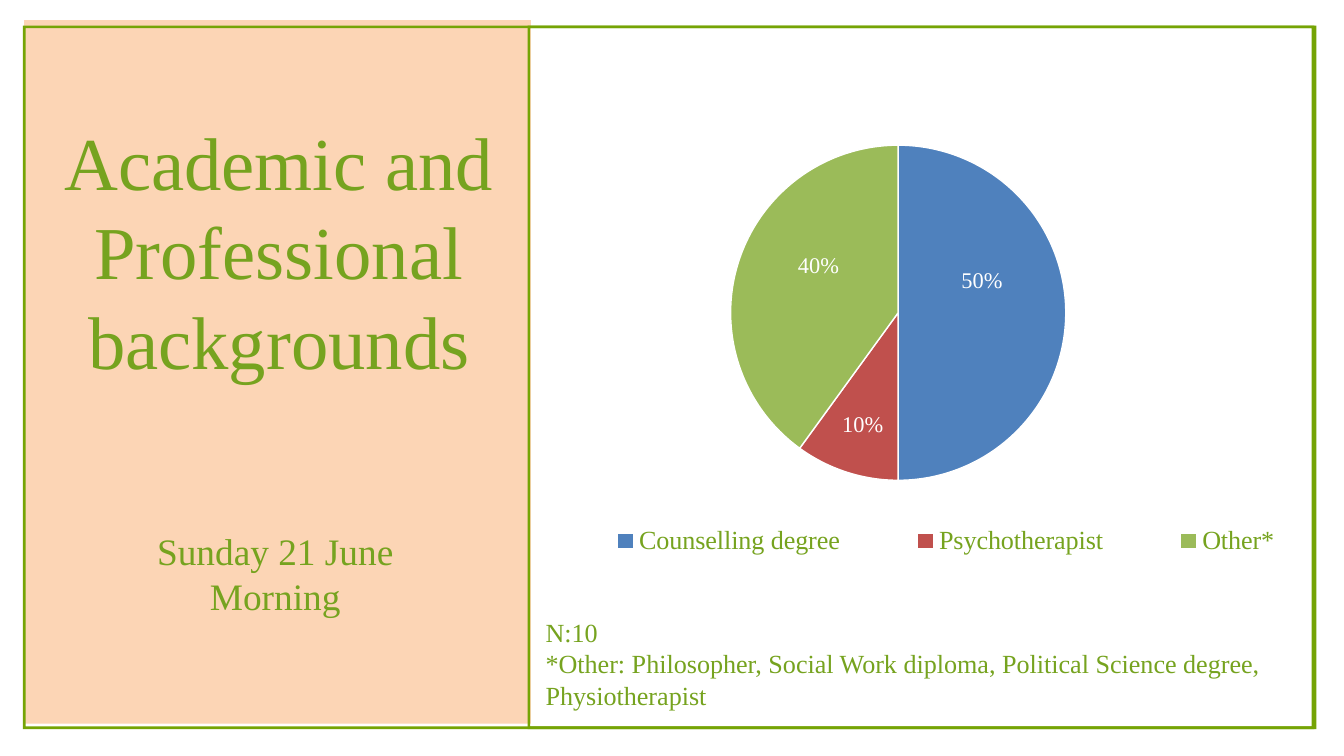
from copy import deepcopy

from pptx import Presentation
from pptx.chart.data import CategoryChartData
from pptx.dml.color import RGBColor
from pptx.enum.chart import XL_CHART_TYPE as ChartType
from pptx.enum.chart import XL_LABEL_POSITION as LabelPosition
from pptx.enum.chart import XL_LEGEND_POSITION as LegendPosition
from pptx.enum.shapes import MSO_SHAPE as Shape
from pptx.enum.text import MSO_ANCHOR as Anchor
from pptx.enum.text import MSO_AUTO_SIZE as AutoSize
from pptx.enum.text import PP_ALIGN as Align
from pptx.oxml import parse_xml
from pptx.oxml.ns import nsdecls
from pptx.util import Inches, Pt

PEACH = RGBColor(0xFC, 0xD5, 0xB5)
FRAME_GREEN = RGBColor(0x75, 0xA4, 0x05)
TEXT_GREEN = RGBColor(0x76, 0xA3, 0x1F)
WHITE = RGBColor(0xFF, 0xFF, 0xFF)
BLACK = RGBColor(0, 0, 0)
BLUE = RGBColor(0x4F, 0x81, 0xBD)
RED = RGBColor(0xC0, 0x50, 0x4D)
OLIVE = RGBColor(0x9B, 0xBB, 0x59)
SERIF = "Times New Roman"


def manual_layout(x, y, w=None, h=None, target=None, edge=False):
    parts = []
    if target:
        parts.append(("layoutTarget", target))
    if edge:
        parts += [("xMode", "edge"), ("yMode", "edge")]
    parts += [("x", x), ("y", y)]
    if w is not None:
        parts += [("w", w), ("h", h)]
    body = "".join(f'<c:{tag} val="{value}"/>' for tag, value in parts)
    return parse_xml(
        f'<c:layout {nsdecls("c")}><c:manualLayout>{body}</c:manualLayout></c:layout>'
    )


class SlideBuilder:
    def __init__(self, page):
        self.page = page

    def style(self, font, size, color, name=SERIF):
        font.name = name
        font.size = Pt(size)
        font.color.rgb = color

    def finish(self, shape, color):
        shape.shadow.inherit = False
        shape.fill.solid()
        shape.fill.fore_color.rgb = color
        shape.line.fill.background()

    def panel(self, left, top, width, height, color):
        box = self.page.shapes.add_shape(
            Shape.RECTANGLE, Inches(left), Inches(top), Inches(width), Inches(height)
        )
        self.finish(box, color)

    def frame(self, left, top, right, bottom, thickness, color):
        outline = None
        for inset in (0, thickness):
            x1, x2 = Inches(left + inset), Inches(right - inset)
            y1, y2 = Inches(top + inset), Inches(bottom - inset)
            if outline is None:
                outline = self.page.shapes.build_freeform(x2, y1)
            else:
                outline.move_to(x2, y1)
            outline.add_line_segments([(x1, y1), (x1, y2), (x2, y2)], close=True)
        self.finish(outline.convert_to_shape(), color)

    def fill_text(self, box, lines, size, align, inset=None):
        frame = box.text_frame
        frame.word_wrap = True
        frame.auto_size = AutoSize.SHAPE_TO_FIT_TEXT
        frame.vertical_anchor = Anchor.TOP
        if inset is not None:
            frame.margin_left = frame.margin_right = Inches(inset)
            frame.margin_top = frame.margin_bottom = Inches(inset)
        for index, line in enumerate(lines):
            para = frame.add_paragraph() if index else frame.paragraphs[0]
            para.alignment = align
            para.space_before = Pt(0)
            span = para.add_run()
            span.text = line
            self.style(span.font, size, TEXT_GREEN)

    def placeholder(self, box, left, top, width, height, line, size, inset=None):
        box.left, box.top = Inches(left), Inches(top)
        box.width, box.height = Inches(width), Inches(height)
        self.fill_text(box, [line], size, Align.CENTER, inset)
        element = box._element
        element.getparent().append(element)

    def text(self, left, top, width, height, lines, size):
        box = self.page.shapes.add_textbox(
            Inches(left), Inches(top), Inches(width), Inches(height)
        )
        self.fill_text(box, lines, size, Align.LEFT)

    def pie(self, left, top, width, height, slices):
        data = CategoryChartData()
        data.categories = [name for name, *_ in slices]
        data.add_series("Series 1", [value for _, value, *_ in slices])
        chart = self.page.shapes.add_chart(
            ChartType.PIE, Inches(left), Inches(top), Inches(width), Inches(height), data
        ).chart
        chart.has_title = False
        self.style(chart.font, 10, BLACK, "Calibri")
        chart.has_legend = True
        legend = chart.legend
        legend.position = LegendPosition.BOTTOM
        legend.include_in_layout = False
        self.style(legend.font, 28, TEXT_GREEN)
        for layout in legend._element.findall("{*}layout"):
            legend._element.remove(layout)
        legend._element.find("{*}legendPos").addnext(
            manual_layout(0.14, 0.92, 0.83, 0.08, edge=True)
        )

        area = chart._chartSpace.chart.plotArea
        for layout in area.findall("{*}layout"):
            area.remove(layout)
        area.insert(0, manual_layout(0.33, 0.16, 0.35, 0.75, "inner", True))

        plot = chart.plots[0]
        plot.vary_by_categories = True
        series = plot.series[0]
        labels = series.data_labels
        labels.show_percentage = True
        labels.show_value = False
        labels.number_format = "0%"
        labels.number_format_is_linked = False
        labels.position = LabelPosition.CENTER
        self.style(labels.font, 24, WHITE)
        shared = [
            child
            for child in labels._element
            if not child.tag.endswith("eaderLines")
        ]
        for index, (_, _, color, offset) in enumerate(slices):
            piece = series.points[index].format
            piece.fill.solid()
            piece.fill.fore_color.rgb = color
            piece.line.color.rgb = WHITE
            piece.line.width = Pt(1.5)
            label = parse_xml(f'<c:dLbl {nsdecls("c")}><c:idx val="{index}"/></c:dLbl>')
            label.append(manual_layout(*offset))
            for child in shared:
                label.append(deepcopy(child))
            labels._element.insert(index, label)


def main():
    deck = Presentation()
    deck.slide_width, deck.slide_height = Inches(20), Inches(11.25)
    page = deck.slides.add_slide(deck.slide_layouts[0])
    builder = SlideBuilder(page)
    title, subtitle = page.placeholders

    builder.panel(0.36, 0.3, 7.54, 10.47, PEACH)
    for left, right in ((0.34, 19.59), (7.85, 19.56)):
        builder.frame(left, 0.38, right, 10.85, 0.04, FRAME_GREEN)
    builder.placeholder(
        title, 0.82, 1.72, 6.66, 4.04, "Academic and Professional backgrounds", 80, 0
    )
    builder.pie(
        6.17, 0.38, 14.25, 7.99,
        [
            ("Counselling degree", 50, BLUE, (0, -0.06)),
            ("Psychotherapist", 10, RED, (-0.01, 0.06)),
            ("Other*", 40, OLIVE, (0, -0.04)),
        ],
    )
    builder.text(
        8.02, 9.12, 11.62, 1.51,
        [
            "N:10",
            "*Other: Philosopher, Social Work diploma, Political Science degree, Physiotherapist",
        ],
        28,
    )
    builder.placeholder(subtitle, 1.8, 7.81, 4.59, 1.45, "Sunday 21 June Morning", 40)
    deck.save("out.pptx")


if __name__ == "__main__":
    main()
